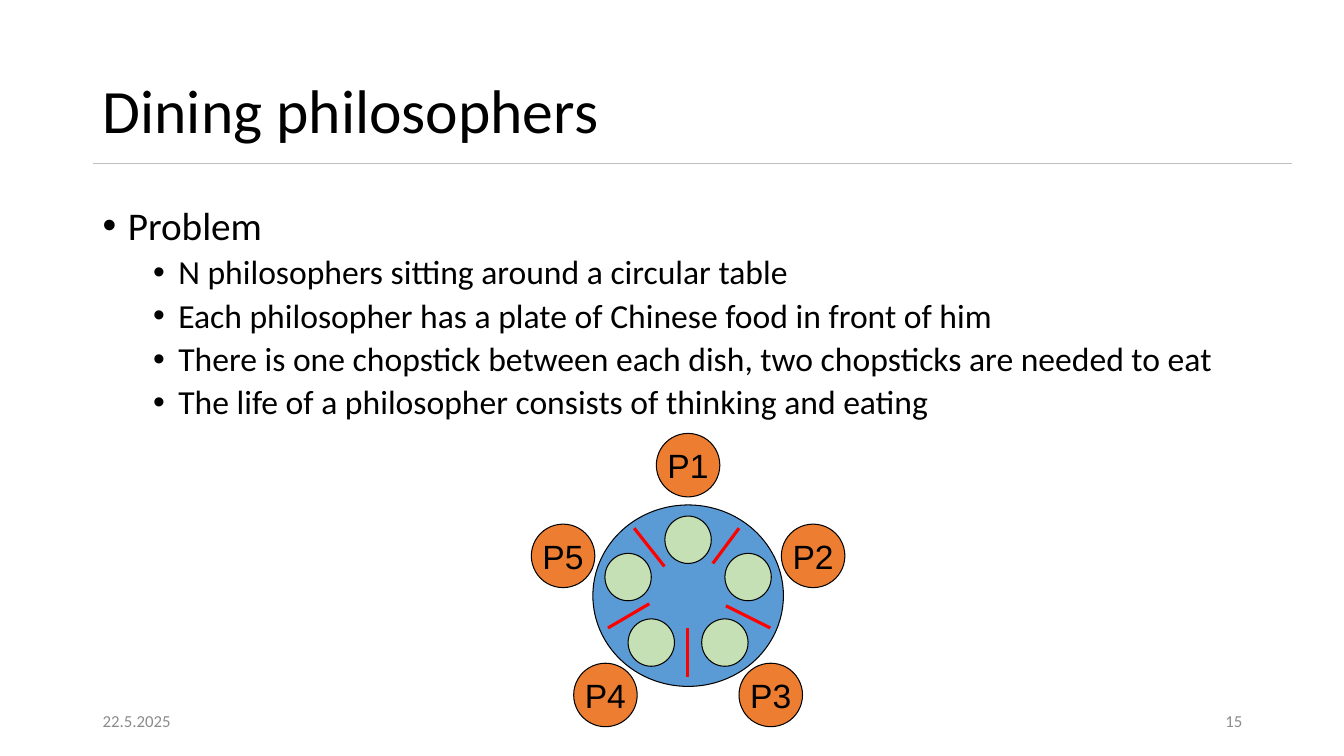
from lxml import etree
from pptx import Presentation
from pptx.dml.color import RGBColor
from pptx.enum import shapes, text
from pptx.oxml import ns
from pptx.util import Inches, Pt

COLOURS = {
    "ink": "000000",
    "footer": "8C8C8C",
    "rule": "BFBFBF",
    "table": "5B9BD5",
    "philosopher": "ED7D31",
    "plate": "C5E0B4",
    "chopstick": "FF0000",
}
FACTS = [
    "N philosophers sitting around a circular table",
    "Each philosopher has a plate of Chinese food in front of him",
    "There is one chopstick between each dish, two chopsticks are needed to eat",
    "The life of a philosopher consists of thinking and eating",
]
CENTRE_X = 6.825
PHILOSOPHERS = [
    ("P1", 0, 4.615),
    ("P2", 1.24, 5.515),
    ("P3", 0.82, 6.895),
    ("P4", -0.82, 6.895),
    ("P5", -1.24, 5.515),
]
PLATES = [(0, 5.355), (0.595, 5.725), (0.365, 6.375), (-0.365, 6.375), (-0.595, 5.725)]
CHOPSTICKS = [
    (7.33, 5.24, 7.07, 5.59),
    (7.64, 6.23, 7.2, 6.01),
    (6.82, 6.23, 6.82, 6.72),
    (6.44, 5.99, 6.03, 6.23),
    (6.29, 5.24, 6.59, 5.62),
]


def colour(name):
    return RGBColor.from_string(COLOURS[name])


def add_span(para, words, size, ink="ink", face="Calibri"):
    span = para.add_run()
    span.text = words
    span.font.size = Pt(size)
    span.font.name = face
    span.font.color.rgb = colour(ink)


def add_box(page, left, top, width, height, anchor=text.MSO_ANCHOR.MIDDLE):
    box = page.shapes.add_textbox(
        Inches(left), Inches(top), Inches(width), Inches(height)
    )
    frame = box.text_frame
    frame.word_wrap = True
    frame.vertical_anchor = anchor
    return frame


def set_bullet(para, indent):
    props = para._p.get_or_add_pPr()
    props.set("marL", str(Inches(indent)))
    props.set("indent", str(Inches(-0.25)))
    font = etree.SubElement(props, ns.qn("a:buFont"))
    font.set("typeface", "Arial")
    mark = etree.SubElement(props, ns.qn("a:buChar"))
    mark.set("char", "•")


def add_body(page):
    frame = add_box(page, 0.92, 2, 11.5, 4.76, text.MSO_ANCHOR.TOP)
    heading = frame.paragraphs[0]
    set_bullet(heading, 0.25)
    heading.line_spacing = 0.9
    add_span(heading, "Problem", 28)
    for fact in FACTS:
        para = frame.add_paragraph()
        para.level = 1
        set_bullet(para, 0.75)
        para.line_spacing = 0.9
        para.space_before = Pt(5)
        add_span(para, fact, 24)


def add_footer(page, left, words, align):
    para = add_box(page, left, 6.95, 3, 0.4).paragraphs[0]
    para.alignment = align
    add_span(para, words, 12, "footer")


def add_oval(page, offset, middle, width, height, fill):
    oval = page.shapes.add_shape(
        shapes.MSO_SHAPE.OVAL,
        Inches(CENTRE_X + offset - width / 2),
        Inches(middle - height / 2),
        Inches(width),
        Inches(height),
    )
    oval.shadow.inherit = False
    oval.fill.solid()
    oval.fill.fore_color.rgb = colour(fill)
    oval.line.color.rgb = colour("ink")
    oval.line.width = Pt(0.75)
    return oval


def add_philosopher(page, name, offset, middle):
    frame = add_oval(page, offset, middle, 0.63, 0.63, "philosopher").text_frame
    frame.word_wrap = False
    frame.vertical_anchor = text.MSO_ANCHOR.MIDDLE
    para = frame.paragraphs[0]
    para.alignment = text.PP_ALIGN.CENTER
    add_span(para, name, 24, face="Arial")


def add_line(page, ends, ink, width):
    line = page.shapes.add_connector(
        shapes.MSO_CONNECTOR.STRAIGHT, *[Inches(end) for end in ends]
    )
    line.line.color.rgb = colour(ink)
    line.line.width = Pt(width)
    etree.SubElement(line._element.spPr, ns.qn("a:effectLst"))


def main():
    deck = Presentation()
    deck.slide_width = Inches(13.33)
    deck.slide_height = Inches(7.5)
    page = deck.slides.add_slide(deck.slide_layouts[6])

    add_line(page, (0.92, 1.62, 12.81, 1.62), "rule", 1)
    title = add_box(page, 0.92, 0.4, 10.63, 1.45).paragraphs[0]
    title.line_spacing = 0.9
    add_span(title, "Dining philosophers", 44)
    add_body(page)
    add_footer(page, 0.92, "22.5.2025", text.PP_ALIGN.LEFT)
    add_footer(page, 9.42, "15", text.PP_ALIGN.RIGHT)

    add_oval(page, 0, 5.91, 1.89, 1.8, "table")
    for name, offset, middle in PHILOSOPHERS:
        add_philosopher(page, name, offset, middle)
    for offset, middle in PLATES:
        add_oval(page, offset, middle, 0.46, 0.47, "plate")
    for ends in CHOPSTICKS:
        add_line(page, ends, "chopstick", 2.25)

    deck.save("out.pptx")


if __name__ == "__main__":
    main()
